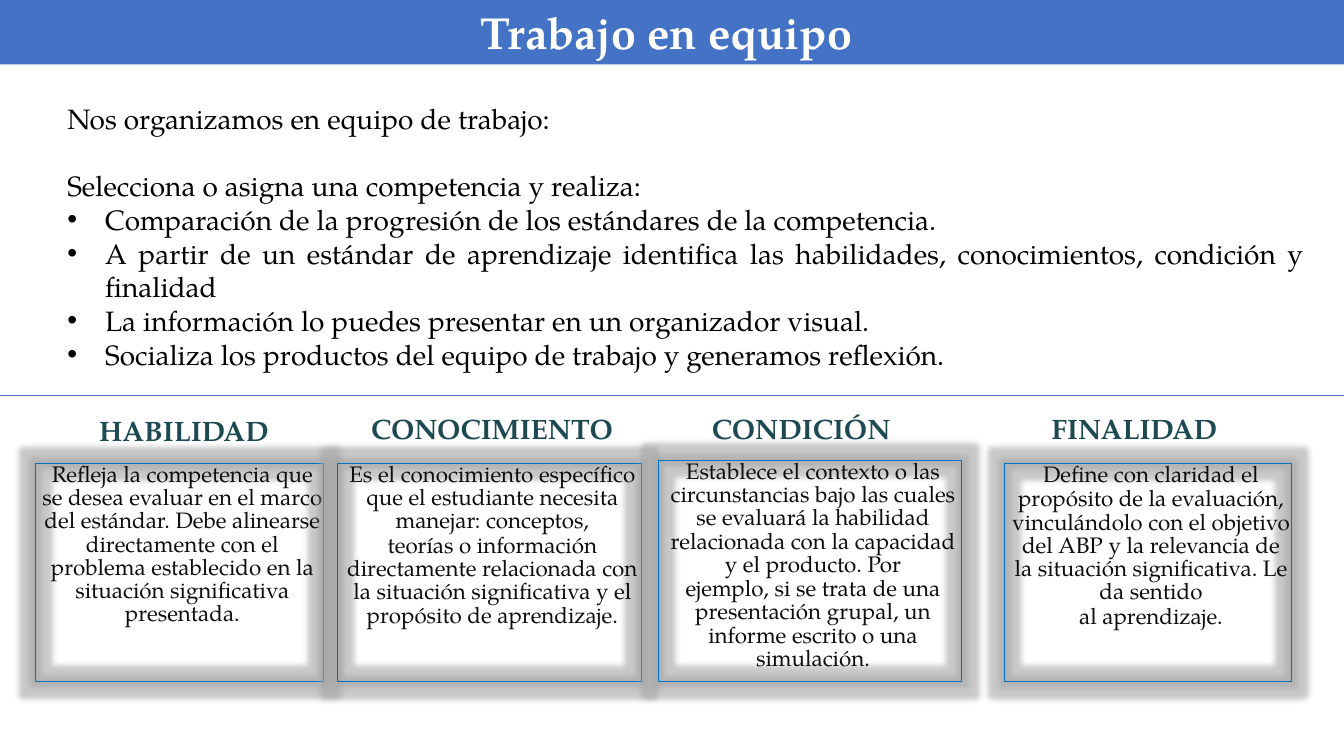
from lxml.etree import SubElement
from pptx import Presentation
from pptx.dml.color import RGBColor
from pptx.enum.shapes import MSO_CONNECTOR, MSO_SHAPE
from pptx.enum.text import MSO_ANCHOR, PP_ALIGN
from pptx.oxml.ns import qn
from pptx.util import Pt

FONT = "TeX Gyre Pagella"
COLORS = {
    "band": "4472C4", "white": "FFFFFF", "body": "000000", "heading": "1D4952",
    "card_text": "0D0D0D", "card_line": "0070C0", "glow": "A5A5A5",
}
WIDTH, HEIGHT = 960, 540
INTRO = "Nos organizamos en equipo de trabajo:"
TASK = "Selecciona o asigna una competencia y realiza:"
STEPS = [
    "Comparación de la progresión de los estándares de la competencia.",
    "A partir de un estándar de aprendizaje identifica las habilidades, conocimientos, condición y finalidad",
    "La información lo puedes presentar en un organizador visual.",
    "Socializa los productos del equipo de trabajo y generamos reflexión.",
]
CARDS = [
    ("HABILIDAD", (69.8, 295.2), (25.2, 331.2, 205.9), [
        "Refleja la competencia que se desea evaluar en el marco del estándar. Debe alinearse directamente con el problema establecido en la situación significativa presentada."]),
    ("CONOCIMIENTO", (264.2, 293.8), (241.2, 331.2, 216.7), [
        "Es el conocimiento específico que el estudiante necesita manejar: conceptos,",
        "teorías o información directamente relacionada con la situación significativa y el propósito de aprendizaje."]),
    ("CONDICIÓN", (507.6, 293.8), (470.2, 329, 216.7), [
        "Establece el contexto o las circunstancias bajo las cuales se evaluará la habilidad relacionada con la capacidad y el producto. Por",
        "ejemplo, si se trata de una presentación grupal, un informe escrito o una simulación."]),
    ("FINALIDAD", (750.2, 293.8), (717.8, 331.2, 204.5), [
        "Define con claridad el",
        "propósito de la evaluación, vinculándolo con el objetivo del ABP y la relevancia de la situación significativa. Le da sentido",
        "al aprendizaje."]),
]
CARD_BOTTOM = 486.7


def color(name):
    return RGBColor.from_string(COLORS[name])


def style(paragraph, size, color_name, alignment, bold=False):
    paragraph.font.name = FONT
    paragraph.font.size = Pt(size)
    paragraph.font.bold = bold
    paragraph.font.color.rgb = color(color_name)
    paragraph.alignment = alignment


def write(frame, texts):
    frame.word_wrap = True
    for number, text in enumerate(texts):
        paragraph = frame.add_paragraph() if number else frame.paragraphs[0]
        paragraph.text = text
    return frame.paragraphs


def clear_margins(frame):
    frame.margin_left = frame.margin_right = 0
    frame.margin_top = frame.margin_bottom = 0


def indent(paragraph, left, first=0):
    properties = paragraph._p.get_or_add_pPr()
    properties.set("marL", str(Pt(left)))
    properties.set("indent", str(Pt(first)))
    return properties


def add_bullet(paragraph):
    properties = indent(paragraph, 27, -27)
    SubElement(properties, qn("a:buFont")).set("typeface", "Arial")
    SubElement(properties, qn("a:buChar")).set("char", "•")


def add_glow(shape, radius, opacity):
    effects = SubElement(shape._element.spPr, qn("a:effectLst"))
    glow = SubElement(effects, qn("a:glow"), rad=str(Pt(radius)))
    tone = SubElement(glow, qn("a:srgbClr"), val=COLORS["glow"])
    SubElement(tone, qn("a:alpha"), val=str(opacity * 1000))


def add_title(slide, left, top, width, height):
    band = slide.shapes.add_shape(
        MSO_SHAPE.RECTANGLE, Pt(left), Pt(top), Pt(width), Pt(height))
    band.shadow.inherit = False
    band.fill.solid()
    band.fill.fore_color.rgb = color("band")
    band.line.fill.background()
    band.text_frame.vertical_anchor = MSO_ANCHOR.TOP
    paragraph = write(band.text_frame, ["Trabajo en equipo "])[0]
    style(paragraph, 32, "white", PP_ALIGN.CENTER, True)


def add_instructions(slide, left, top, width, height):
    box = slide.shapes.add_textbox(Pt(left), Pt(top), Pt(width), Pt(height))
    paragraphs = write(box.text_frame, [INTRO, TASK, *STEPS])
    for paragraph in paragraphs:
        style(paragraph, 20, "body", PP_ALIGN.JUSTIFY)
    paragraphs[0].space_after = Pt(24)
    for paragraph in paragraphs[2:]:
        add_bullet(paragraph)


def add_divider(slide, left, top, width):
    divider = slide.shapes.add_connector(
        MSO_CONNECTOR.STRAIGHT, Pt(left), Pt(top), Pt(left + width), Pt(top))
    divider.line.color.rgb = color("band")
    divider.line.width = Pt(0.5)
    SubElement(divider._element.spPr, qn("a:effectLst"))


def add_heading(slide, left, top, text):
    box = slide.shapes.add_textbox(Pt(left), Pt(top), Pt(180), Pt(24.5))
    clear_margins(box.text_frame)
    paragraph = write(box.text_frame, [text])[0]
    style(paragraph, 20, "heading", PP_ALIGN.LEFT, True)
    paragraph.line_spacing = Pt(24.1)
    paragraph.space_before = Pt(1.2)
    indent(paragraph, 1)


def add_card(slide, left, top, width, height, texts):
    card = slide.shapes.add_shape(
        MSO_SHAPE.RECTANGLE, Pt(left), Pt(top), Pt(width), Pt(height))
    card.fill.background()
    card.line.color.rgb = color("card_line")
    card.line.width = Pt(0.75)
    add_glow(card, 8, 60)
    clear_margins(card.text_frame)
    card.text_frame.vertical_anchor = MSO_ANCHOR.TOP
    for paragraph in write(card.text_frame, texts):
        style(paragraph, 16, "card_text", PP_ALIGN.CENTER)
        paragraph.line_spacing = Pt(16.6)
        paragraph.space_before = Pt(0.8)
        indent(paragraph, 4.3)


def main():
    presentation = Presentation()
    presentation.slide_width, presentation.slide_height = Pt(WIDTH), Pt(HEIGHT)
    slide = presentation.slides.add_slide(presentation.slide_layouts[6])
    add_title(slide, 0, 0, WIDTH, 46)
    add_instructions(slide, 41, 69.1, 897.8, 200.9)
    for heading, heading_place, (left, top, width), texts in CARDS:
        add_heading(slide, *heading_place, heading)
        add_card(slide, left, top, width, CARD_BOTTOM - top, texts)
    add_divider(slide, 0, 282.2, WIDTH)
    presentation.save("out.pptx")


if __name__ == "__main__":
    main()
